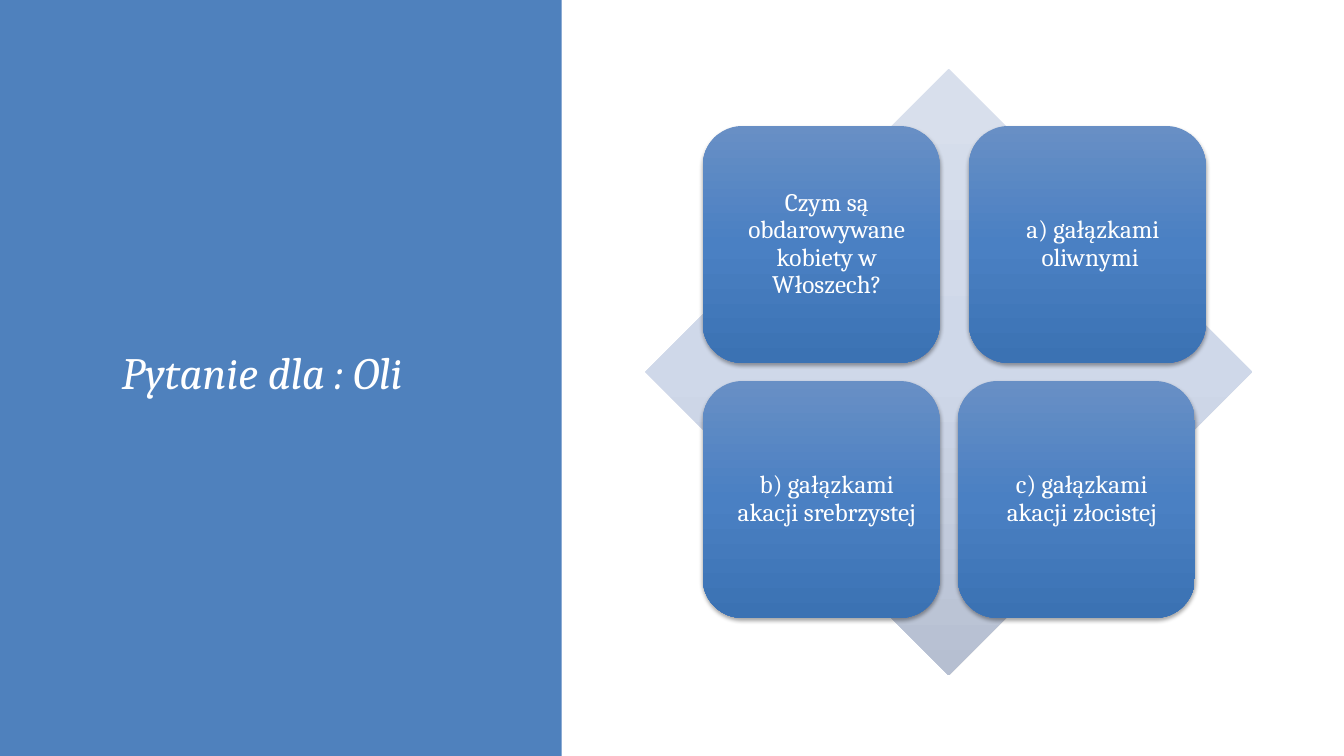
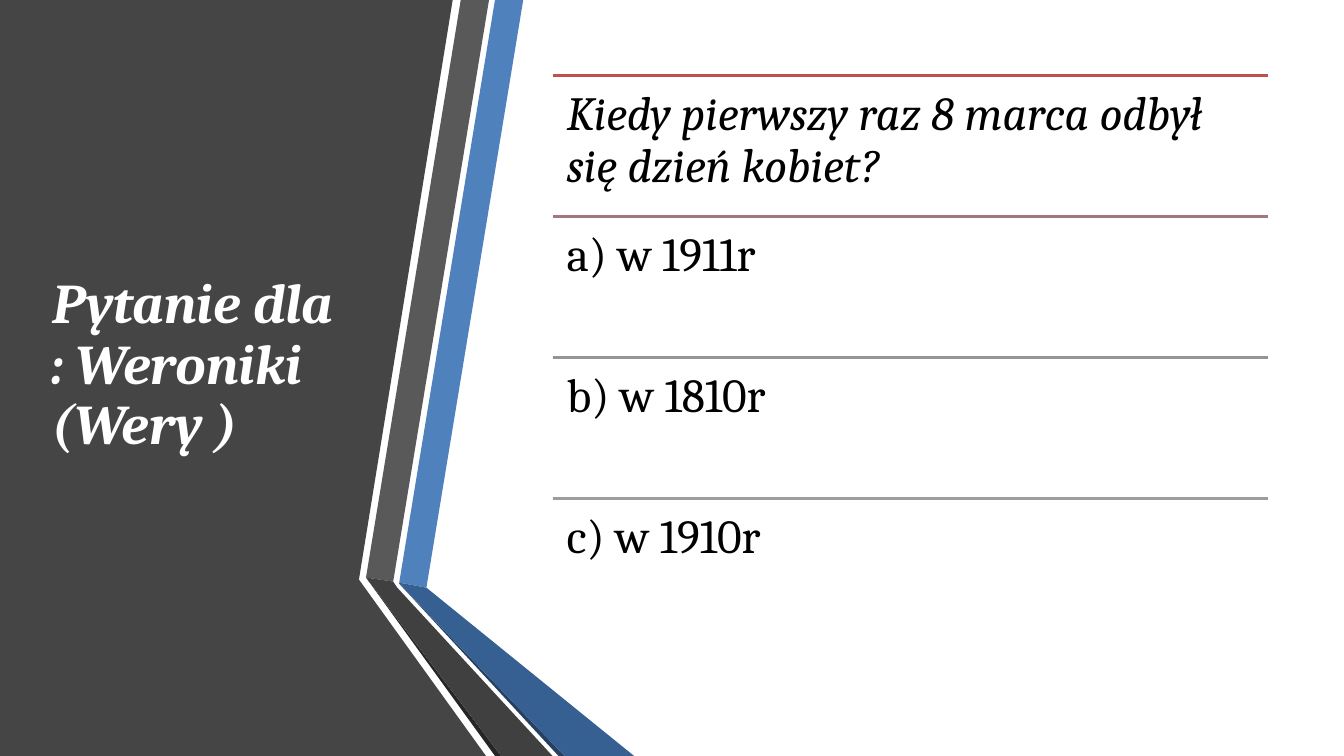
from pptx import Presentation
from pptx.dml.color import RGBColor
from pptx.enum.shapes import MSO_CONNECTOR, MSO_SHAPE
from pptx.enum.text import MSO_ANCHOR, PP_ALIGN
from pptx.oxml import parse_xml
from pptx.oxml.ns import nsdecls, qn
from pptx.oxml.xmlchemy import OxmlElement
from pptx.util import Inches, Pt
from copy import deepcopy

CENTER, LEFT = PP_ALIGN.CENTER, PP_ALIGN.LEFT
MIDDLE, TOP = MSO_ANCHOR.MIDDLE, MSO_ANCHOR.TOP
DIAMOND, RECTANGLE = MSO_SHAPE.DIAMOND, MSO_SHAPE.RECTANGLE
ROUNDED = MSO_SHAPE.ROUNDED_RECTANGLE
STRAIGHT = MSO_CONNECTOR.STRAIGHT

FONT = "Cambria"
WHITE, BLACK, BLUE = "FFFFFF", "000000", "4F81BD"
DIAMOND_GRADIENT = ("D8DFEC", "CFD8E9", "B6BFD1")
CARD_GRADIENT = ("688FC5", "4A80C3", "3B72B3")
DEFAULT_INSETS = (0.1, 0.05, 0.1, 0.05)


def color(value):
    return RGBColor.from_string(value)


class QuestionDeck:
    """Holds the deck style and the slide being filled."""

    def __init__(self):
        self.deck = Presentation()
        self.deck.slide_width = Inches(13.33)
        self.deck.slide_height = Inches(7.5)
        self.page = None

    def new_page(self):
        self.page = self.deck.slides.add_slide(self.deck.slide_layouts[6])
        self.page.background.fill.solid()
        self.page.background.fill.fore_color.rgb = color(WHITE)

    def paint(self, shape, fill):
        """Fill with one colour, or with a top-down gradient of three."""
        shape.shadow.inherit = False
        shape.line.fill.background()
        if isinstance(fill, str):
            shape.fill.solid()
            shape.fill.fore_color.rgb = color(fill)
            return
        shape.fill.gradient()
        shape.fill.gradient_angle = 270
        stop_list = shape.element.spPr.find(".//" + qn("a:gsLst"))
        stop_list.append(deepcopy(stop_list[0]))
        for index, stop in enumerate(shape.fill.gradient_stops):
            stop.position = index / 2
            stop.color.rgb = color(fill[index])

    def shape(self, kind, left, top, width, height, fill):
        shape = self.page.shapes.add_shape(
            kind, Inches(left), Inches(top), Inches(width), Inches(height))
        self.paint(shape, fill)
        return shape

    def polygon(self, points, fill):
        corners = [(Inches(x), Inches(y)) for x, y in points]
        builder = self.page.shapes.build_freeform(*corners[0])
        builder.add_line_segments(corners[1:], close=True)
        self.paint(builder.convert_to_shape(), fill)

    def drop_shadow(self, shape):
        effects = shape.element.spPr.find(qn("a:effectLst"))
        effects.append(parse_xml(
            f'<a:outerShdw {nsdecls("a")} blurRad="{Pt(3.1)}" dist="{Pt(1.8)}" '
            'dir="5400000" rotWithShape="0"><a:srgbClr val="000000">'
            '<a:alpha val="35000"/></a:srgbClr></a:outerShdw>'))

    def set_text(self, shape, text, size=18, ink=WHITE, bold=False, italic=False,
                 align=LEFT, anchor=MIDDLE, insets=DEFAULT_INSETS,
                 spacing=None, after=0):
        frame = shape.text_frame
        frame.word_wrap = True
        frame.vertical_anchor = anchor
        (frame.margin_left, frame.margin_top,
         frame.margin_right, frame.margin_bottom) = map(Inches, insets)
        para = frame.paragraphs[0]
        para.alignment = align
        para.line_spacing = spacing
        para.space_after = Pt(after)
        span = para.add_run()
        span.text = text
        span.font.name = FONT
        span.font.size = Pt(size)
        span.font.bold = bold
        span.font.italic = italic
        span.font.color.rgb = color(ink)

    def text_box(self, left, top, width, height, text, **style):
        box = self.page.shapes.add_textbox(
            Inches(left), Inches(top), Inches(width), Inches(height))
        self.set_text(box, text, **style)

    def card(self, left, top, side, text):
        card = self.shape(ROUNDED, left, top, side, side, CARD_GRADIENT)
        card.adjustments[0] = 0.167
        self.drop_shadow(card)
        self.set_text(card, text, align=CENTER, spacing=0.9, after=6.3,
                      insets=(0.19, 0.19, 0.08, 0.19))

    def rule(self, left, top, width, ink):
        line = self.page.shapes.add_connector(
            STRAIGHT, Inches(left), Inches(top), Inches(left + width), Inches(top))
        line.line.color.rgb = color(ink)
        line.line.width = Pt(2)
        line._element.spPr.append(OxmlElement("a:effectLst"))


def build_card_question(quiz):
    quiz.new_page()
    quiz.shape(RECTANGLE, 0, 0, 5.57, 7.5, BLUE)
    quiz.text_box(0.57, 0.68, 4.16, 6.02, "Pytanie dla : Oli ",
                  size=32, italic=True, align=CENTER)
    quiz.shape(DIAMOND, 6.4, 0.68, 6.02, 6.02, DIAMOND_GRADIENT)
    cards = (
        (6.97, 1.25, "Czym są obdarowywane kobiety w Włoszech?"),
        (9.61, 1.25, "a) gałązkami oliwnymi "),
        (6.97, 3.78, "b) gałązkami akacji srebrzystej"),
        (9.5, 3.78, "c) gałązkami akacji złocistej"),
    )
    for left, top, text in cards:
        quiz.card(left, top, 2.35, text)


def build_list_question(quiz):
    quiz.new_page()
    folded_bands = (
        ("454545", [(0, 0), (4.49, 0), (3.56, 5.75), (4.82, 7.5), (0, 7.5)]),
        (BLUE, [(3.96, 5.78), (4.23, 5.83), (5.19, 0), (4.91, 0)]),
        ("595959", [(4.85, 0), (4.57, 0), (3.63, 5.73), (3.9, 5.77)]),
        ("262626", [(3.63, 5.73), (4.91, 7.5), (4.97, 7.5)]),
        ("254061", [(3.96, 5.79), (5.54, 7.5), (5.6, 7.5)]),
        ("376092", [(3.96, 5.79), (5.6, 7.5), (6.29, 7.5), (4.23, 5.83),
                    (3.96, 5.78)]),
        ("404040", [(5.48, 7.5), (3.94, 5.83), (3.9, 5.77), (3.63, 5.73),
                    (4.97, 7.5)]),
    )
    for fill, points in folded_bands:
        quiz.polygon(points, fill)
    quiz.text_box(0.42, 0.84, 3.04, 5.58, "Pytanie dla : Weroniki (Wery )",
                  size=40, bold=True, italic=True, spacing=0.9)

    left, top, width, row_height = 5.48, 0.75, 7.1, 5.59 / 4
    rows = (
        ("C0504D", "Kiedy pierwszy raz 8 marca odbył się dzień kobiet?"),
        ("A4777C", "a) w 1911r"),
        ("959595", "b) w 1810r"),
        ("9D9D9D", "c) w 1910r"),
    )
    for index, (ink, text) in enumerate(rows):
        row_top = top + index * row_height
        quiz.rule(left, row_top, width, ink)
        quiz.text_box(left, row_top, width, row_height, text, size=34, ink=BLACK,
                      italic=index == 0, anchor=TOP, insets=(0.14,) * 4,
                      spacing=0.9, after=11.9)


def main():
    quiz = QuestionDeck()
    build_card_question(quiz)
    build_list_question(quiz)
    quiz.deck.save("out.pptx")


if __name__ == "__main__":
    main()
